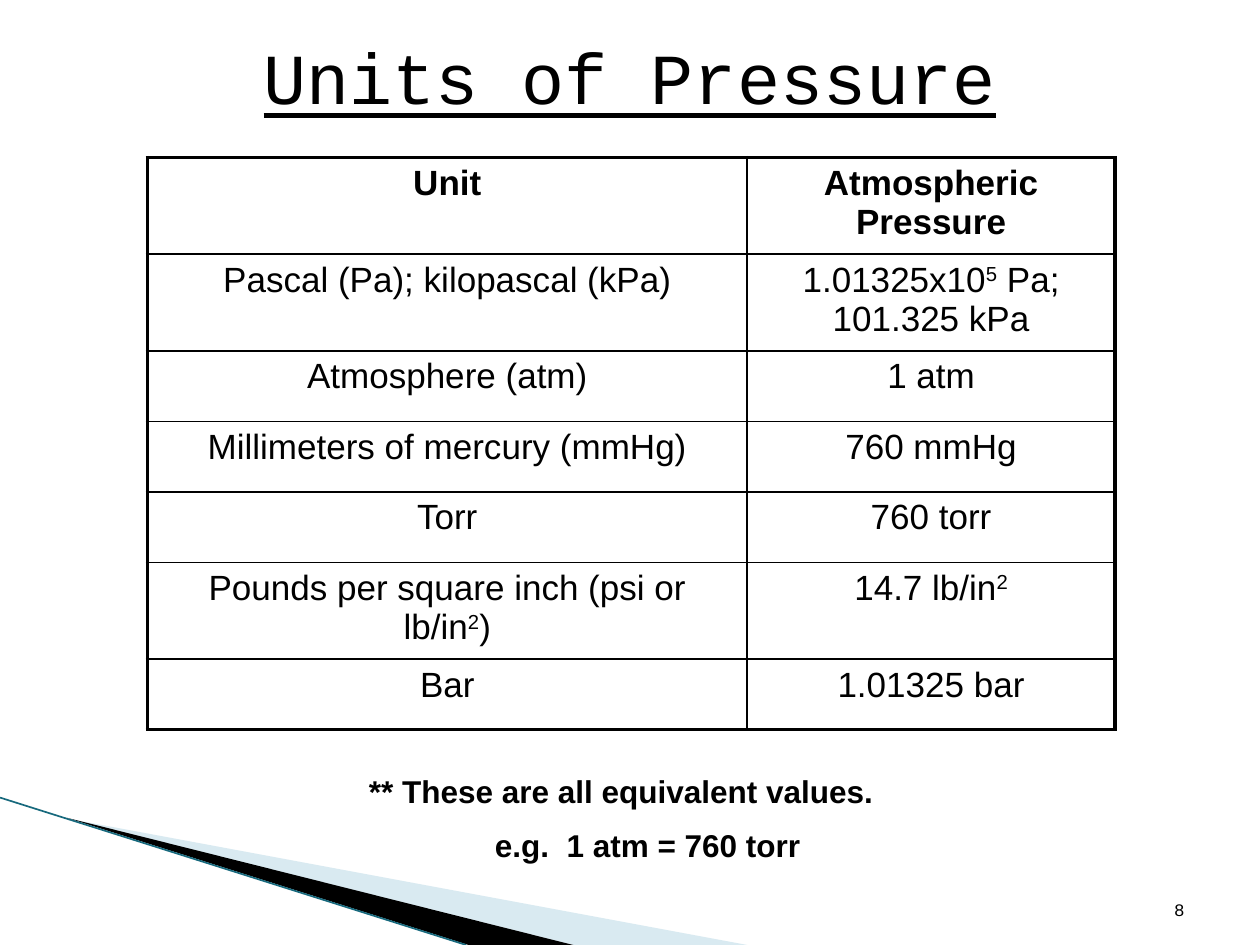
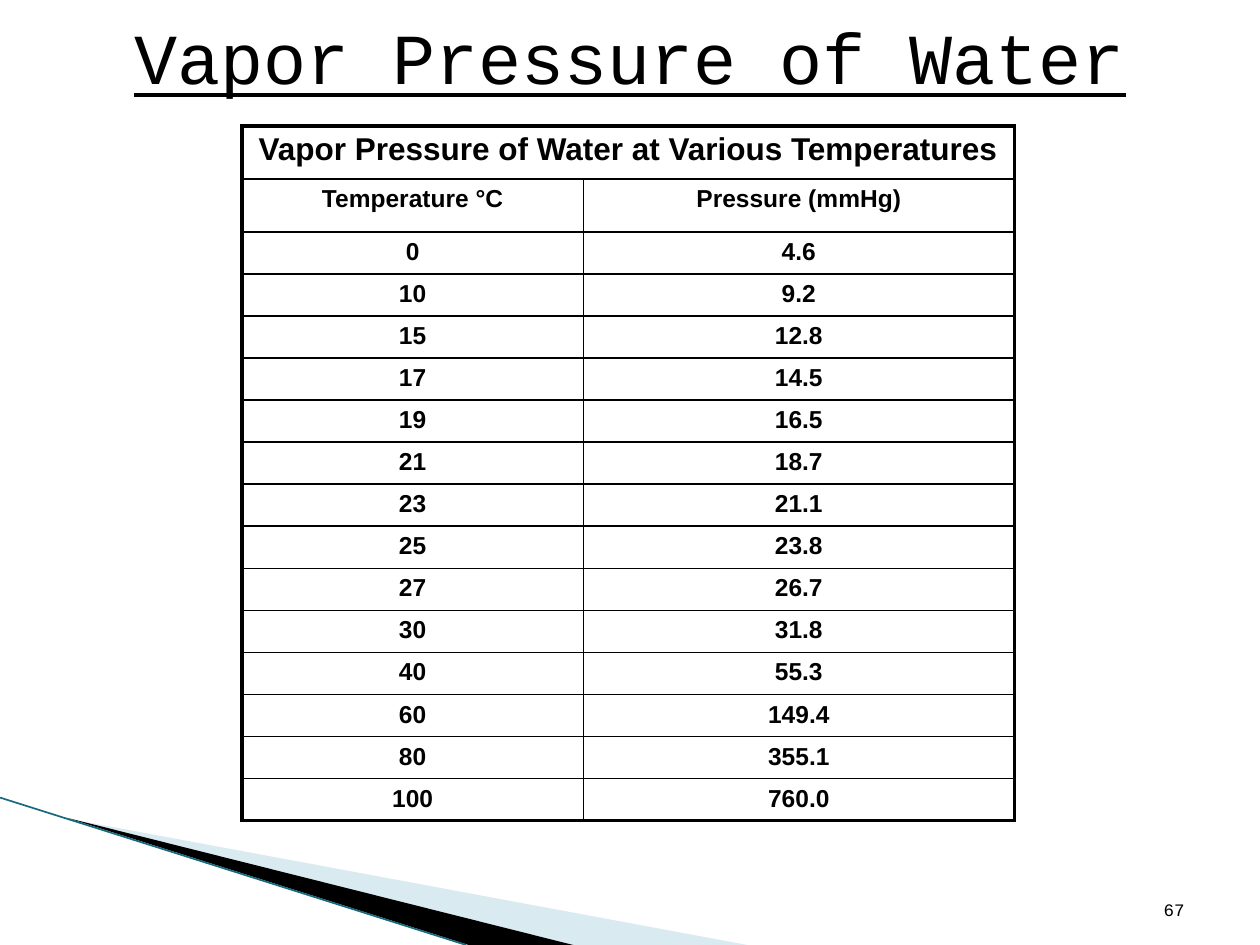
from lxml.etree import SubElement
from pptx import Presentation
from pptx.dml.color import RGBColor
from pptx.enum.shapes import MSO_CONNECTOR
from pptx.enum.text import MSO_ANCHOR, PP_ALIGN
from pptx.oxml.ns import qn
from pptx.util import Inches, Pt

COLORS = {"ink": "000000", "pale": "A0CBDC", "edge": "17697D"}
TITLE = {"name": "Courier New", "size": Pt(41), "underline": True}
NUMBER = {"name": "Courier New", "size": Pt(10)}
BODY = {"name": "Arial", "size": Pt(20), "bold": False}
HEAD = {**BODY, "bold": True}
NOTE = {**HEAD, "size": Pt(18)}
DATA = {**HEAD, "size": Pt(14)}
COLS, ROWS = 40, 30
OUTER, INNER = 2.25, 1


class Deck:
    def __init__(self):
        self.prs = Presentation()
        self.prs.slide_width, self.prs.slide_height = Inches(10), Inches(7.5)
        self.s = None

    def x(self, cols):
        return round(self.prs.slide_width * cols / COLS)

    def y(self, rows):
        return round(self.prs.slide_height * rows / ROWS)

    def box(self, left, top, width, height):
        return self.x(left), self.y(top), self.x(width), self.y(height)

    def slide(self, title, title_top, title_height, number):
        self.s = self.prs.slides.add_slide(self.prs.slide_layouts[6])
        self.wedge("pale", [(2.2, 26), (23.72, 30), (18.2, 30)], 40)
        self.wedge("ink", [(2.12, 25.96), (18.2, 30), (14.88, 30)])
        self.line("edge", (0, 25.32), (14.8, 30), 0.95)
        self.text([title], (2, title_top, 36, title_height), TITLE,
                  PP_ALIGN.CENTER, MSO_ANCHOR.MIDDLE)
        self.text([number], (28.68, 27.32, 9.32, 2.08), NUMBER,
                  PP_ALIGN.RIGHT, MSO_ANCHOR.BOTTOM)

    def wedge(self, color, points, opacity=100):
        start, *rest = [(self.x(x), self.y(y)) for x, y in points]
        fb = self.s.shapes.build_freeform(*start)
        fb.add_line_segments(rest)
        sp = fb.convert_to_shape()
        sp.shadow.inherit = False
        sp.line.fill.background()
        sp.fill.solid()
        sp.fill.fore_color.rgb = RGBColor.from_string(COLORS[color])
        clr = sp._element.spPr.find(".//" + qn("a:srgbClr"))
        SubElement(clr, qn("a:alpha"), val=str(opacity * 1000))

    def line(self, color, start, end, width):
        (x1, y1), (x2, y2) = start, end
        sp = self.s.shapes.add_connector(
            MSO_CONNECTOR.STRAIGHT, self.x(x1), self.y(y1), self.x(x2), self.y(y2))
        sp.line.color.rgb = RGBColor.from_string(COLORS[color])
        sp.line.width = Pt(width)
        SubElement(sp._element.spPr, qn("a:effectLst"))

    def text(self, lines, box, style, align=PP_ALIGN.LEFT,
             anchor=MSO_ANCHOR.TOP, gap=0, indent=0):
        tf = self.s.shapes.add_textbox(*self.box(*box)).text_frame
        tf.word_wrap, tf.vertical_anchor = True, anchor
        for i, line in enumerate(lines):
            p = tf.add_paragraph() if i else tf.paragraphs[0]
            if i:
                p.space_before = Pt(gap)
                p._p.get_or_add_pPr().set("marL", str(self.x(indent)))
            self.runs(p, line, style, align)

    def runs(self, p, line, style, align):
        p.alignment = align
        for i, part in enumerate(line.split("^")):
            if not part:
                continue
            r = p.add_run()
            r.text = part
            for key, value in style.items():
                setattr(r.font, key, value)
            r.font.color.rgb = RGBColor.from_string(COLORS["ink"])
            if i % 2:
                r.font._element.set("baseline", "30000")

    def table(self, left, top, widths, heights, data, styles, banner=False):
        box = self.box(left, top, sum(widths), sum(heights))
        tbl = self.s.shapes.add_table(len(heights), len(widths), *box).table
        tbl.first_row = tbl.horz_banding = False
        for col, width in zip(tbl.columns, widths):
            col.width = self.x(width)
        for row, height in zip(tbl.rows, heights):
            row.height = self.y(height)
        if banner:
            tbl.cell(0, 0).merge(tbl.cell(0, len(widths) - 1))
        for i, values in enumerate(data):
            style = styles[min(i, len(styles) - 1)]
            for j, value in enumerate(values):
                cell = tbl.cell(i, j)
                self.runs(cell.text_frame.paragraphs[0], value, style, PP_ALIGN.CENTER)
                last = j + (cell.span_width if cell.is_merge_origin else 1)
                self.borders(cell, {"L": j == 0, "R": last == len(widths),
                                    "T": i == 0, "B": i == len(heights) - 1})
                cell.fill.background()

    def borders(self, cell, sides):
        tcPr = cell._tc.get_or_add_tcPr()
        for side, outer in sides.items():
            width = Pt(OUTER if outer else INNER)
            ln = SubElement(tcPr, qn("a:ln" + side), w=str(width))
            fill = SubElement(ln, qn("a:solidFill"))
            SubElement(fill, qn("a:srgbClr"), val=COLORS["ink"])


def main():
    deck = Deck()

    units = [
        ("Unit", "Atmospheric Pressure"),
        ("Pascal (Pa); kilopascal (kPa)", "1.01325x10^5^ Pa; 101.325 kPa"),
        ("Atmosphere (atm)", "1 atm"),
        ("Millimeters of mercury (mmHg)", "760 mmHg"),
        ("Torr", "760 torr"),
        ("Pounds per square inch (psi or lb/in^2^)", "14.7 lb/in^2^"),
        ("Bar", "1.01325 bar"),
    ]
    two_line_rows = {0, 1, 5}
    heights = [2.88 if i in two_line_rows else 2.24 for i in range(len(units))]
    deck.slide("Units of Pressure", 0.32, 4.2, "8")
    deck.table(4.68, 5, [19.04, 11.68], heights, units, [HEAD, BODY])
    deck.text(["** These are all equivalent values.", "e.g.  1 atm = 760 torr"],
              (11.32, 24.32, 22, 3.4), NOTE, gap=9, indent=4)

    vapor = {
        "0": "4.6", "10": "9.2", "15": "12.8", "17": "14.5", "19": "16.5",
        "21": "18.7", "23": "21.1", "25": "23.8", "27": "26.7", "30": "31.8",
        "40": "55.3", "60": "149.4", "80": "355.1", "100": "760.0",
    }
    short_rows = {"10", "27", "30", "100"}
    heights = [1.68, 1.68] + [1.28 if t in short_rows else 1.33 for t in vapor]
    data = [("Vapor Pressure of Water at Various Temperatures",),
            ("Temperature °C", "Pressure (mmHg)"), *vapor.items()]
    deck.slide("Vapor Pressure of Water", 0, 3.52, "67")
    deck.table(7.68, 4, [10.84, 13.68], heights, data, [NOTE, DATA], banner=True)

    deck.prs.save("out.pptx")


if __name__ == "__main__":
    main()
